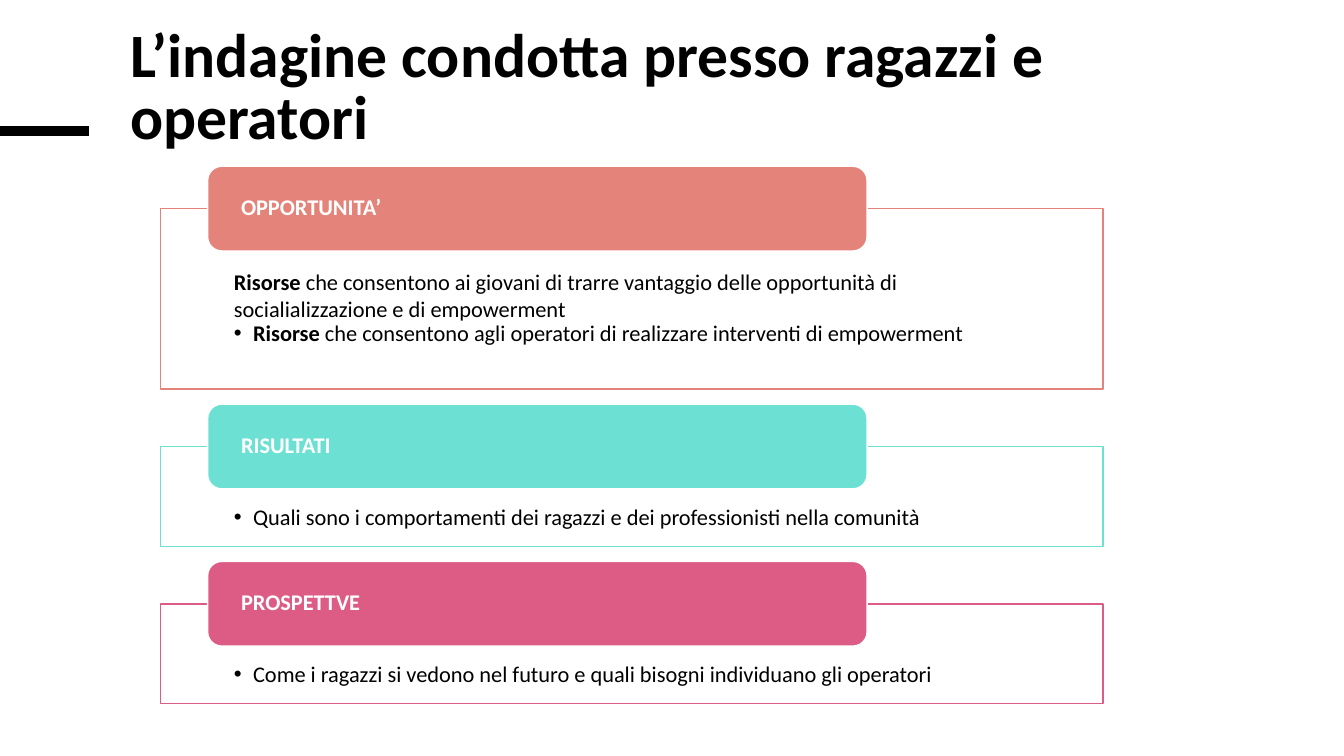
from lxml import etree
from pptx import Presentation
from pptx.dml.color import RGBColor
from pptx.enum.shapes import MSO_CONNECTOR, MSO_SHAPE
from pptx.enum.text import MSO_ANCHOR, PP_ALIGN
from pptx.oxml.ns import qn
from pptx.util import Inches, Pt

TITLE = "L’indagine condotta presso ragazzi e operatori"
# Each paragraph: bold lead, plain text, bulleted
SECTIONS = [
    {"head": "OPPORTUNITA’", "color": "E38379", "top": 1.65, "height": 1.79, "body": [
        ("Risorse ", "che consentono ai giovani di trarre vantaggio delle opportunità di "
                     "socialializzazione e di empowerment", False),
        ("Risorse ", "che consentono agli operatori di realizzare interventi di empowerment", True)]},
    {"head": "RISULTATI", "color": "6BE0D3", "top": 4.01, "height": 0.99, "body": [
        ("", "Quali sono i comportamenti dei ragazzi e dei professionisti nella comunità", True)]},
    {"head": "PROSPETTVE", "color": "DD5C85", "top": 5.57, "height": 0.99, "body": [
        ("", "Come i ragazzi si vedono nel futuro e quali bisogni individuano gli operatori", True)]},
]
FRAME_LEFT, FRAME_WIDTH = 1.59, 9.35
TAB_LEFT, TAB_WIDTH, TAB_HEIGHT = 2.06, 6.54, 0.84
BULLET_INDENT = 0.19


def rgb(color):
    return RGBColor.from_string(color)


def add_run(p, text, size=16, color="000000", bold=False):
    r = p.add_run()
    r.text = text
    r.font.name = "Calibri"
    r.font.size = Pt(size)
    r.font.bold = bold
    r.font.color.rgb = rgb(color)


def add_bullet(p):
    pPr = p._p.get_or_add_pPr()
    pPr.set("marL", str(Inches(BULLET_INDENT)))
    pPr.set("indent", str(-Inches(BULLET_INDENT)))
    etree.SubElement(pPr, qn("a:buFont")).set("typeface", "Arial")
    etree.SubElement(pPr, qn("a:buChar")).set("char", "•")


def set_frame(tf, anchor, left=0.1, top=0.05, right=0.1, bottom=0.05):
    tf.word_wrap = True
    tf.vertical_anchor = anchor
    tf.margin_left, tf.margin_top = Inches(left), Inches(top)
    tf.margin_right, tf.margin_bottom = Inches(right), Inches(bottom)


def add_box(s, kind, left, top, width, height, fill, line):
    sp = s.shapes.add_shape(kind, Inches(left), Inches(top), Inches(width), Inches(height))
    sp.shadow.inherit = False
    sp.fill.solid()
    sp.fill.fore_color.rgb = rgb(fill)
    sp.line.color.rgb = rgb(line)
    sp.line.width = Pt(1)
    return sp


def add_section(s, head, color, top, height, body):
    frame = add_box(s, MSO_SHAPE.RECTANGLE, FRAME_LEFT, top + TAB_HEIGHT / 2,
                    FRAME_WIDTH, height, "FFFFFF", color)
    tf = frame.text_frame
    set_frame(tf, MSO_ANCHOR.TOP, 0.73, 0.59, 1, 0.12)
    for i, (lead, text, bulleted) in enumerate(body):
        p = tf.add_paragraph() if i else tf.paragraphs[0]
        p.alignment = PP_ALIGN.LEFT
        p.line_spacing = 0.9 if bulleted else 1.0
        if bulleted:
            add_bullet(p)
        if lead:
            add_run(p, lead, bold=True)
        add_run(p, text)

    tab = add_box(s, MSO_SHAPE.ROUNDED_RECTANGLE, TAB_LEFT, top, TAB_WIDTH, TAB_HEIGHT,
                  color, "FFFFFF")
    set_frame(tab.text_frame, MSO_ANCHOR.MIDDLE, 0.29, 0, 0.29, 0)
    p = tab.text_frame.paragraphs[0]
    p.alignment = PP_ALIGN.LEFT
    p.line_spacing = 0.9
    add_run(p, head, color="FFFFFF", bold=True)


def main():
    prs = Presentation()
    prs.slide_width, prs.slide_height = Inches(13.33), Inches(7.5)
    s = prs.slides.add_slide(prs.slide_layouts[5])

    title = s.shapes.title
    title.left, title.top = Inches(1.19), Inches(0.18)
    title.width, title.height = Inches(10.85), Inches(1.42)
    set_frame(title.text_frame, MSO_ANCHOR.MIDDLE)
    p = title.text_frame.paragraphs[0]
    p.alignment = PP_ALIGN.LEFT
    p.line_spacing = 0.85
    add_run(p, TITLE, size=44, bold=True)

    accent = s.shapes.add_connector(MSO_CONNECTOR.STRAIGHT, 0, Inches(1.3), Inches(0.88), Inches(1.3))
    accent.line.color.rgb = rgb("000000")
    accent.line.width = Pt(6.75)
    etree.SubElement(accent._element.spPr, qn("a:effectLst"))

    for section in SECTIONS:
        add_section(s, **section)
    prs.save("out.pptx")


if __name__ == "__main__":
    main()
